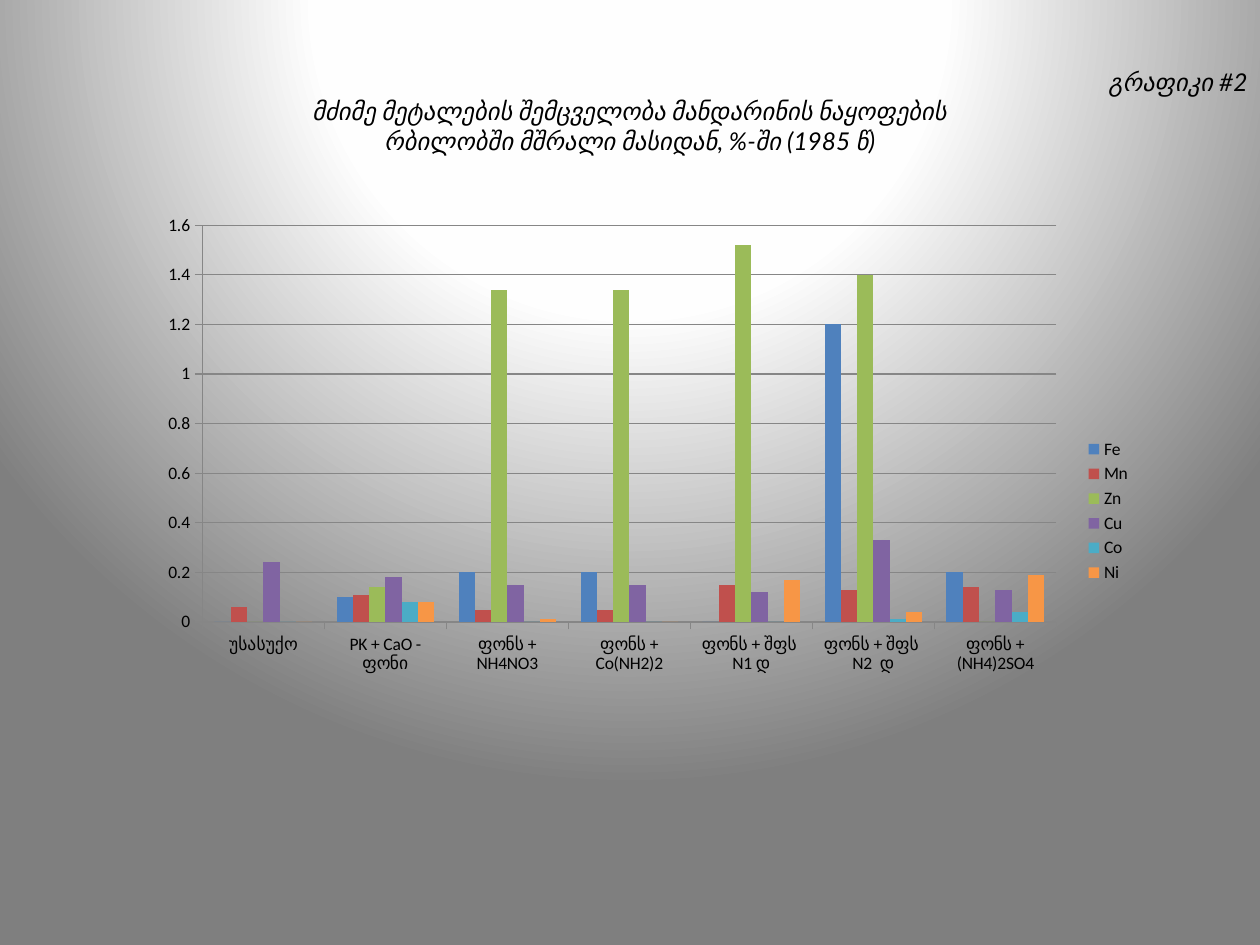
import pptx
import pptx.util
import pptx.oxml
import pptx.oxml.ns
import pptx.dml.color
import pptx.chart.data
import pptx.enum.chart
import pptx.enum.text

PX = 914400 // 126  # slide is laid out at 126 px to the inch
SLIDE_W, SLIDE_H = 1260, 945
NS = pptx.oxml.ns.nsdecls

TREATMENTS = [
    "უსასუქო", "PK + CaO - ფონი", "ფონს + NH4NO3", "ფონს + Co(NH2)2",
    "ფონს + შფს  N1 დ", "ფონს + შფს  N2  დ", "ფონს + (NH4)2SO4",
]
METALS = {
    "Fe": ("4F81BD", [0, 0.1, 0.2, 0.2, 0, 1.2, 0.2]),
    "Mn": ("C0504D", [0.06, 0.11, 0.05, 0.05, 0.15, 0.13, 0.14]),
    "Zn": ("9BBB59", [0, 0.14, 1.34, 1.34, 1.52, 1.4, 0]),
    "Cu": ("8064A2", [0.24, 0.18, 0.15, 0.15, 0.12, 0.33, 0.13]),
    "Co": ("4BACC6", [0, 0.08, 0, 0, 0, 0.01, 0.04]),
    "Ni": ("F79646", [0, 0.08, 0.01, 0, 0.17, 0.04, 0.19]),
}
ALIGN = pptx.enum.text.PP_ALIGN
HEADING = [
    ("გრაფიკი #2", ALIGN.RIGHT),
    ("მძიმე მეტალების შემცველობა მანდარინის ნაყოფების", ALIGN.CENTER),
    ("რბილობში მშრალი მასიდან, %-ში (1985 წ)", ALIGN.CENTER),
]


def px(length):
    return pptx.util.Emu(length * PX)


def color(hex_value):
    return pptx.dml.color.RGBColor.from_string(hex_value)


def set_all(target, values):
    for name, value in values.items():
        setattr(target, name, value)


def style_font(font, name, size, **extra):
    set_all(font, {"name": name, "size": pptx.util.Pt(size), **extra})
    font.color.rgb = color("000000")


def paint_background(slide):
    """Circular gradient centred above the slide."""
    slide.background.fill.gradient()
    linear = slide.element.find(".//" + pptx.oxml.ns.qn("a:gradFill"))
    stops = "".join(
        f'<a:gs pos="{pos * 1000}"><a:srgbClr val="{shade}"/></a:gs>'
        for pos, shade in [(0, "FFFFFF"), (40, "FEFEFE"), (100, "7F7F7F")])
    radial = pptx.oxml.parse_xml(
        f'<a:gradFill {NS("a")} rotWithShape="1"><a:gsLst>{stops}</a:gsLst>'
        '<a:path path="circle"><a:fillToRect l="50000" t="-80000" r="50000" b="180000"/>'
        '</a:path></a:gradFill>')
    linear.getparent().replace(linear, radial)


def add_heading(slide, left, top, width, height):
    frame = slide.shapes.add_textbox(px(left), px(top), px(width), px(height)).text_frame
    set_all(frame, {
        "word_wrap": True,
        "vertical_anchor": pptx.enum.text.MSO_ANCHOR.TOP,
        "margin_top": px(67),
    })
    for index, (line, alignment) in enumerate(HEADING):
        paragraph = frame.add_paragraph() if index else frame.paragraphs[0]
        paragraph.alignment = alignment
        run = paragraph.add_run()
        run.text = line
        style_font(run.font, "Lato", 14, italic=True)


def place_plot(chart, x, y, w, h):
    """Fix the inner plot area, in fractions of the chart."""
    plot_area = chart.plots[0]._element.getparent()
    for layout in plot_area.findall(pptx.oxml.ns.qn("c:layout")):
        plot_area.remove(layout)
    sizes = "".join(f'<c:{tag} val="{value}"/>'
                    for tag, value in [("x", x), ("y", y), ("w", w), ("h", h)])
    plot_area.insert(0, pptx.oxml.parse_xml(
        f'<c:layout {NS("c")}><c:manualLayout><c:layoutTarget val="inner"/>'
        f'<c:xMode val="edge"/><c:yMode val="edge"/>{sizes}</c:manualLayout></c:layout>'))


def add_metal_chart(slide, left, top, width, height):
    data = pptx.chart.data.CategoryChartData()
    data.categories = TREATMENTS
    for metal, (_, contents) in METALS.items():
        data.add_series(metal, contents)
    enums = pptx.enum.chart
    chart = slide.shapes.add_chart(
        enums.XL_CHART_TYPE.COLUMN_CLUSTERED,
        px(left), px(top), px(width), px(height), data).chart
    set_all(chart, {"has_title": False, "has_legend": True})
    style_font(chart.font, "Calibri", 10)
    set_all(chart.legend, {
        "position": enums.XL_LEGEND_POSITION.RIGHT, "include_in_layout": False})

    # Columns
    columns = chart.plots[0]
    set_all(columns, {"gap_width": 150, "vary_by_categories": False})
    for series, (fill, _) in zip(columns.series, METALS.values()):
        series.invert_if_negative = False
        series.format.fill.solid()
        series.format.fill.fore_color.rgb = color(fill)

    # Axes and gridlines
    contents_axis = chart.value_axis
    set_all(contents_axis, {
        "minimum_scale": 0, "maximum_scale": 1.6, "major_unit": 0.2,
        "has_major_gridlines": True})
    for axis in (chart.category_axis, contents_axis):
        axis.major_tick_mark = enums.XL_TICK_MARK.OUTSIDE
    for part in (chart.category_axis, contents_axis, contents_axis.major_gridlines):
        part.format.line.color.rgb = color("868686")
        part.format.line.width = pptx.util.Pt(0.75)
    place_plot(chart, 0.075, 0.042, 0.839, 0.636)


def main():
    deck = pptx.Presentation()
    set_all(deck, {"slide_width": px(SLIDE_W), "slide_height": px(SLIDE_H)})
    slide = deck.slides.add_slide(deck.slide_layouts[6])
    paint_background(slide)
    add_heading(slide, 0, 0, SLIDE_W, 199)
    add_metal_chart(slide, 126, 199, 1018, 624)
    deck.save("out.pptx")


if __name__ == "__main__":
    main()
